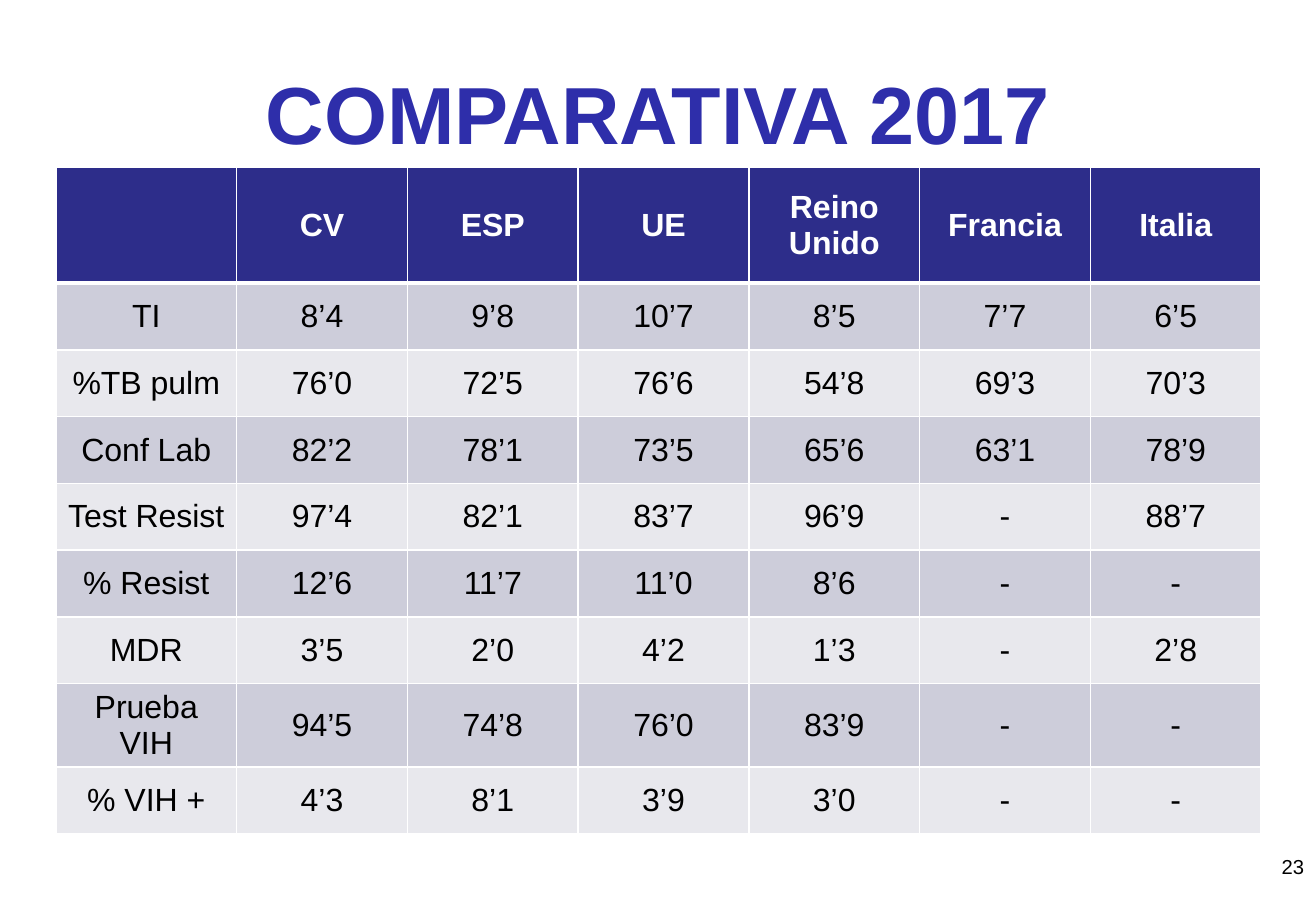
from dataclasses import dataclass

from lxml import etree
from pptx import Presentation
from pptx.dml.color import RGBColor
from pptx.enum.text import MSO_ANCHOR, MSO_AUTO_SIZE, PP_ALIGN
from pptx.oxml.ns import qn
from pptx.slide import Slide
from pptx.table import _Cell
from pptx.text.text import TextFrame
from pptx.util import Pt

CENTER, RIGHT = PP_ALIGN.CENTER, PP_ALIGN.RIGHT
TOP, MIDDLE = MSO_ANCHOR.TOP, MSO_ANCHOR.MIDDLE
NO_FIT = MSO_AUTO_SIZE.NONE


@dataclass(frozen=True)
class Theme:
    font: str = "Arial"
    title: str = "2E2EAA"
    head: str = "2D2D8A"
    bands: tuple[str, str] = ("CDCDDA", "E8E8ED")
    white: str = "FFFFFF"
    black: str = "000000"
    title_size: float = 48
    cell_size: float = 19
    page_size: float = 12


@dataclass(frozen=True)
class Box:
    left: float
    top: float
    width: float
    height: float

    def points(self) -> tuple[Pt, Pt, Pt, Pt]:
        return Pt(self.left), Pt(self.top), Pt(self.width), Pt(self.height)


@dataclass(frozen=True)
class Row:
    label: str
    values: tuple[str, ...]


THEME = Theme()
WIDTH, HEIGHT = 780, 540
TITLE = Box(0, 34, WIDTH, 65.5)
TABLE = Box(33.1, 99.4, 714.4, 385.2)
PAGE = Box(598, 502.6, 182, 37.4)
LABEL_WIDTH, HEAD_HEIGHT = 107.2, 68.4

HEAD = Row("", ("CV", "ESP", "UE", "Reino Unido", "Francia", "Italia"))
ROWS = [
    Row("TI", ("8’4", "9’8", "10’7", "8’5", "7’7", "6’5")),
    Row("%TB pulm", ("76’0", "72’5", "76’6", "54’8", "69’3", "70’3")),
    Row("Conf Lab", ("82’2", "78’1", "73’5", "65’6", "63’1", "78’9")),
    Row("Test Resist", ("97’4", "82’1", "83’7", "96’9", "-", "88’7")),
    Row("% Resist", ("12’6", "11’7", "11’0", "8’6", "-", "-")),
    Row("MDR", ("3’5", "2’0", "4’2", "1’3", "-", "2’8")),
    Row("Prueba VIH", ("94’5", "74’8", "76’0", "83’9", "-", "-")),
    Row("% VIH +", ("4’3", "8’1", "3’9", "3’0", "-", "-")),
]


def write(frame: TextFrame, text: str, *, size: float, color: str,
          bold: bool = False, align: PP_ALIGN = CENTER) -> None:
    para = frame.paragraphs[0]
    para.alignment = align
    if not text:
        return
    run = para.add_run()
    run.text = text
    run.font.name = THEME.font
    run.font.size = Pt(size)
    run.font.bold = bold
    run.font.color.rgb = RGBColor.from_string(color)


def edge(cell: _Cell, side: str, width: float) -> None:
    props = cell._tc.get_or_add_tcPr()
    line = etree.SubElement(props, qn(f"a:ln{side}"), w=str(Pt(width)))
    fill = etree.SubElement(line, qn("a:solidFill"))
    etree.SubElement(fill, qn("a:srgbClr"), val=THEME.white)


def draw_cell(cell: _Cell, text: str, row: int) -> None:
    head = row == 0
    # Borders come before the fill in the cell properties
    widths = {"L": 1, "R": 1, "T": 3 if row == 1 else 1, "B": 3 if head else 1}
    for side, width in widths.items():
        edge(cell, side, width)
    cell.fill.solid()
    back = THEME.head if head else THEME.bands[(row - 1) % 2]
    cell.fill.fore_color.rgb = RGBColor.from_string(back)
    cell.vertical_anchor = MIDDLE
    cell.margin_left = cell.margin_right = Pt(6)
    write(cell.text_frame, text, size=THEME.cell_size, bold=head,
          color=THEME.white if head else THEME.black)


def draw_table(slide: Slide) -> None:
    rows = [HEAD, *ROWS]
    count = len(HEAD.values)
    table = slide.shapes.add_table(len(rows), count + 1, *TABLE.points()).table
    table.horz_banding = False

    # Column widths and row heights
    for col in table.columns:
        col.width = Pt((TABLE.width - LABEL_WIDTH) / count)
    table.columns[0].width = Pt(LABEL_WIDTH)
    for line in table.rows:
        line.height = Pt((TABLE.height - HEAD_HEIGHT) / len(ROWS))
    table.rows[0].height = Pt(HEAD_HEIGHT)

    for r, row in enumerate(rows):
        for c, text in enumerate((row.label, *row.values)):
            draw_cell(table.cell(r, c), text, r)


def draw_title(slide: Slide) -> None:
    title = slide.shapes.title
    title.left, title.top, title.width, title.height = TITLE.points()
    frame = title.text_frame
    frame.auto_size = NO_FIT
    frame.vertical_anchor = MIDDLE
    write(frame, "COMPARATIVA 2017", size=THEME.title_size,
          color=THEME.title, bold=True)


def draw_page(slide: Slide) -> None:
    frame = slide.shapes.add_textbox(*PAGE.points()).text_frame
    frame.word_wrap = True
    frame.vertical_anchor = TOP
    write(frame, "23", size=THEME.page_size, color=THEME.black, align=RIGHT)


def main() -> None:
    deck = Presentation()
    deck.slide_width, deck.slide_height = Pt(WIDTH), Pt(HEIGHT)
    slide = deck.slides.add_slide(deck.slide_layouts[5])
    draw_table(slide)
    draw_page(slide)
    draw_title(slide)
    deck.save("out.pptx")


if __name__ == "__main__":
    main()
